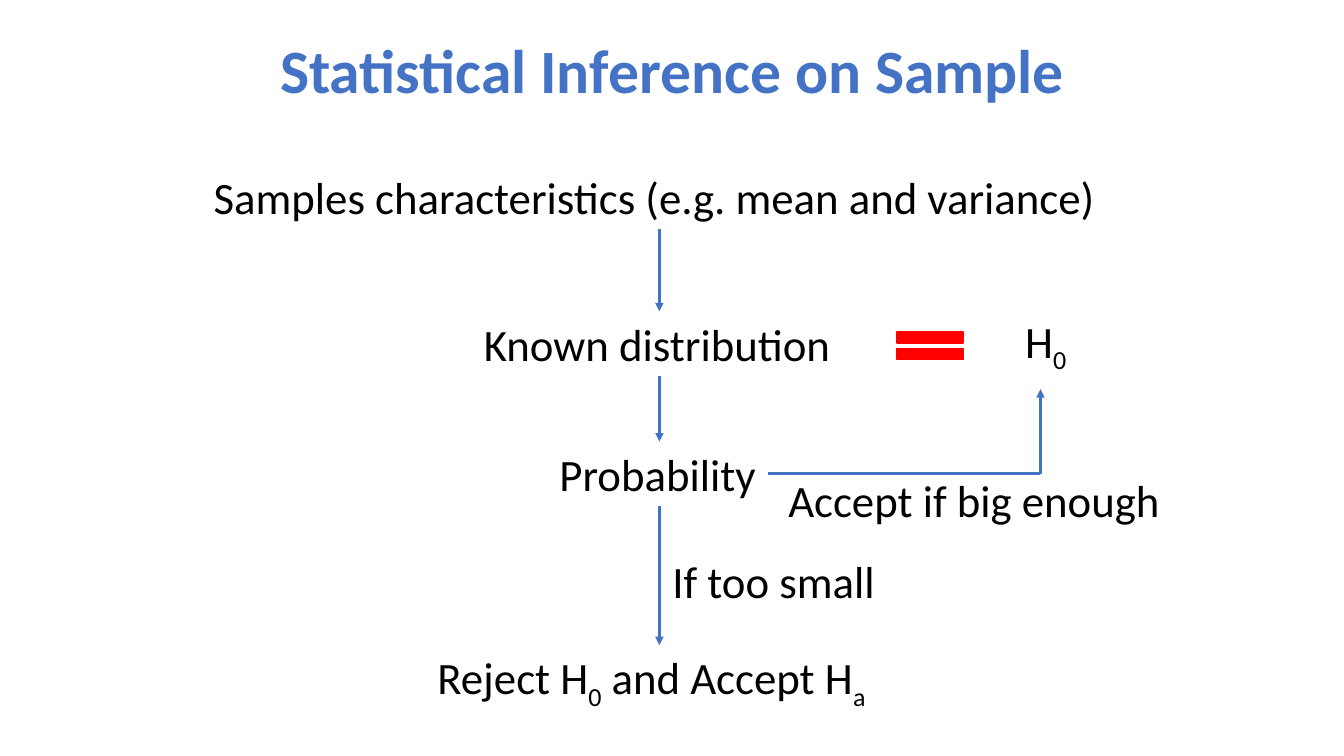
from lxml import etree
from pptx import Presentation
from pptx.dml.color import RGBColor
from pptx.enum.shapes import MSO_CONNECTOR, MSO_SHAPE
from pptx.enum.text import MSO_ANCHOR, MSO_AUTO_SIZE, PP_ALIGN
from pptx.oxml.ns import qn
from pptx.util import Inches, Pt

LINE = MSO_CONNECTOR.STRAIGHT
EQUAL = MSO_SHAPE.MATH_EQUAL
MIDDLE, TOP = MSO_ANCHOR.MIDDLE, MSO_ANCHOR.TOP
FIT, FIXED = MSO_AUTO_SIZE.SHAPE_TO_FIT_TEXT, MSO_AUTO_SIZE.NONE
LEFT, CENTER = PP_ALIGN.LEFT, PP_ALIGN.CENTER
BLUE, RED, BLACK = "4472C4", "FF0000", "000000"
ROW = 0.64  # height of one line of text


def color(code):
    return RGBColor.from_string(code)


def add_text(slide, text, box, size=32, ink=BLACK, bold=False, align=LEFT,
             anchor=TOP, wrap=False, fit=FIT, space=1.0):
    """Underscores switch subscript on and off."""
    frame = slide.shapes.add_textbox(*map(Inches, box)).text_frame
    frame.word_wrap = wrap
    frame.auto_size = fit
    frame.vertical_anchor = anchor
    para = frame.paragraphs[0]
    para.alignment = align
    para.line_spacing = space
    for i, part in enumerate(text.split("_")):
        if not part:
            continue
        run = para.add_run()
        run.text = part
        font = run.font
        font.name, font.size, font.bold = "Calibri", Pt(size), bold
        font.color.rgb = color(ink)
        if i % 2:
            run._r.get_or_add_rPr().set("baseline", "-25000")


def add_line(slide, start, end, arrow=True):
    link = slide.shapes.add_connector(LINE, *map(Inches, start + end))
    link.line.color.rgb = color(BLUE)
    link.line.width = Pt(2)
    if arrow:
        tip = etree.SubElement(link.line._get_or_add_ln(), qn("a:tailEnd"))
        tip.set("type", "triangle")
    etree.SubElement(link._element.spPr, qn("a:effectLst"))


def add_title(slide, box):
    add_text(slide, "Statistical Inference on Sample", box, size=44, ink=BLUE,
             bold=True, align=CENTER, anchor=MIDDLE, wrap=True, fit=FIXED,
             space=0.9)


def add_steps(slide, left, top):
    """Main chain: steps joined by arrows down one axis."""
    steps = [  # text, offset from left, offset from top, width
        ("Samples characteristics (e.g. mean and variance)", 0, 0, 9.04),
        ("Known distribution", 2.68, 1.46, 3.68),
        ("Probability", 3.43, 2.75, 2.17),
        ("Reject H_0_ and Accept H_a", 2.22, 4.77, 4.6),
    ]
    axis = left + 4.52
    for text, x, y, width in steps:
        add_text(slide, text, (left + x, top + y, width, ROW))
    for above, below in zip(steps, steps[1:]):
        add_line(slide, (axis, top + above[2] + ROW), (axis, top + below[2]))
    add_text(slide, "If too small", (axis + 0.03, top + 3.81, 2.23, ROW))


def add_branch(slide, left, top):
    """Right side: the null hypothesis and the way back to it."""
    # Equals sign
    sign = slide.shapes.add_shape(
        EQUAL, *map(Inches, (left + 1.16, top + 0.14, 0.89, 0.46)))
    sign.shadow.inherit = False
    sign.fill.solid()
    sign.fill.fore_color.rgb = color(RED)
    sign.line.color.rgb = color(RED)
    sign.line.width = Pt(1)
    add_text(slide, "H_0", (left + 2.45, top, 0.63, ROW))

    # Path from probability up to the hypothesis
    turn = (left + 2.7, top + 1.64)
    add_line(slide, (left, turn[1]), turn, arrow=False)
    add_line(slide, turn, (turn[0], top + 0.8))
    add_text(slide, "Accept if big enough", (left + 0.1, top + 1.58, 3.94, ROW))


def main():
    deck = Presentation()
    deck.slide_width, deck.slide_height = Inches(13.33), Inches(7.5)
    slide = deck.slides.add_slide(deck.slide_layouts[6])
    add_title(slide, (0.92, 0, 11.5, 1.45))
    add_steps(slide, 2.02, 1.63)
    add_branch(slide, 7.62, 3.06)
    deck.save("out.pptx")


if __name__ == "__main__":
    main()
